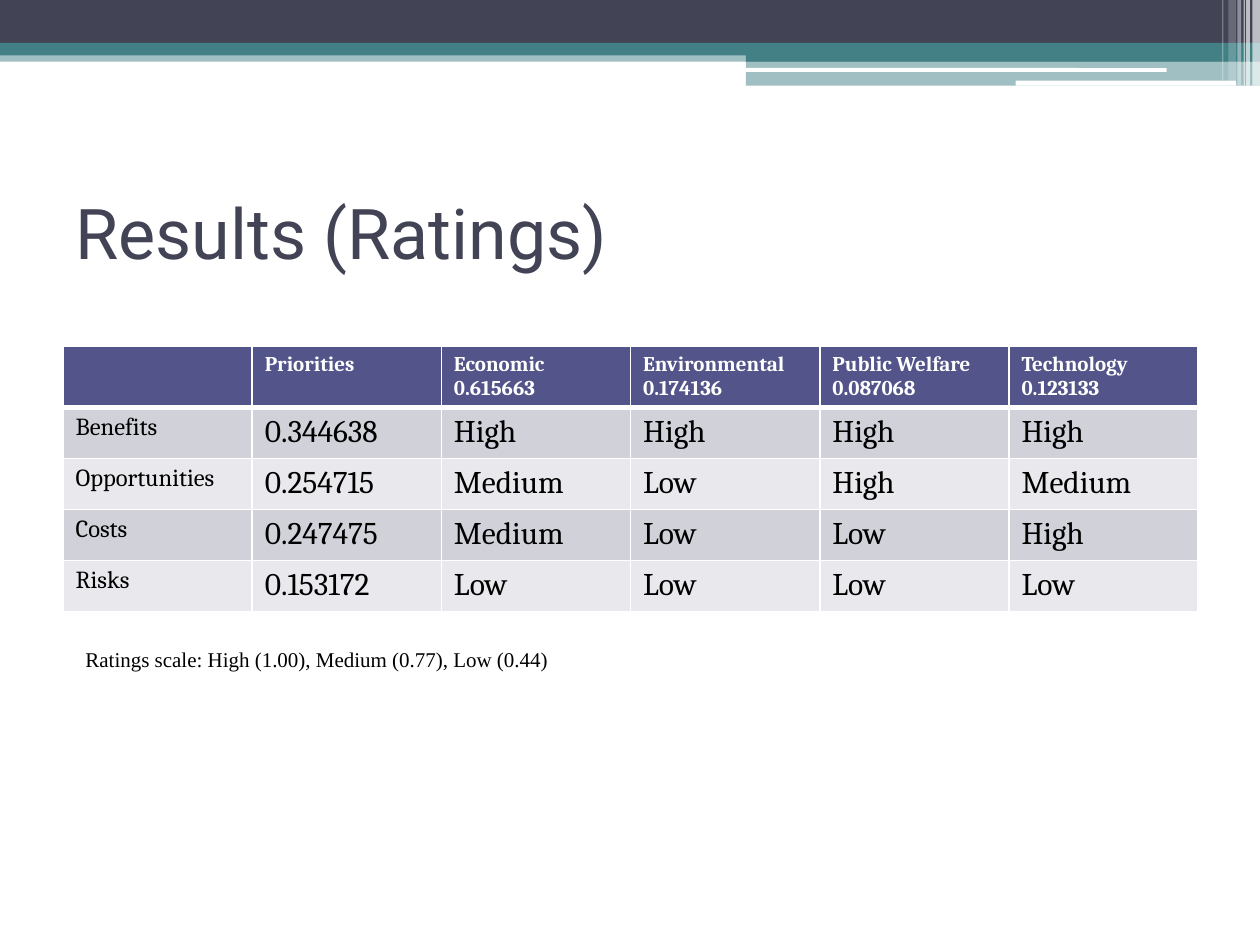
import dataclasses
import lxml.etree
import pptx
import pptx.dml.color
import pptx.enum.shapes
import pptx.enum.text
import pptx.oxml.ns
import pptx.util

KIND = pptx.enum.shapes.MSO_SHAPE
ALIGN = pptx.enum.text.PP_ALIGN
ANCHOR = pptx.enum.text.MSO_ANCHOR
qn = pptx.oxml.ns.qn


@dataclasses.dataclass(frozen=True)
class Theme:
    dark: str = "424456"
    teal: str = "438086"
    white: str = "FFFFFF"
    black: str = "000000"
    head: str = "53548A"
    bands: tuple = ("D1D1DA", "E9E9ED")
    title: int = 40
    cell: int = 18
    label: int = 14
    small: int = 12
    sans: str = "Roboto"
    serif: str = "Cambria"
    note: str = "Times New Roman"


class Deck:
    cols, rows = 100, 75

    def __init__(self, theme):
        self.theme = theme
        self.file = pptx.Presentation()
        self.file.slide_width = pptx.util.Inches(10)
        self.file.slide_height = pptx.util.Inches(7.5)
        self.slide = self.file.slides.add_slide(self.file.slide_layouts[5])

    def across(self, count):
        return round(self.file.slide_width * count / self.cols)

    def down(self, count):
        return round(self.file.slide_height * count / self.rows)

    def place(self, left, top, width, height):
        return self.across(left), self.down(top), self.across(width), self.down(height)

    def color(self, code):
        return pptx.dml.color.RGBColor.from_string(code)

    def letter(self, frame, text, size, font, code, bold=False):
        frame.text = text
        for para in frame.paragraphs:
            para.alignment = ALIGN.LEFT
            for run in para.runs:
                run.font.size = pptx.util.Pt(size)
                run.font.name = font
                run.font.bold = bold
                run.font.color.rgb = self.color(code)

    def bar(self, box, code, alpha=100, kind=KIND.RECTANGLE):
        shape = self.slide.shapes.add_shape(kind, *self.place(*box))
        shape.shadow.inherit = False
        shape.line.fill.background()
        shape.fill.solid()
        shape.fill.fore_color.rgb = self.color(code)
        if alpha < 100:
            tint = shape.element.spPr.find(f"{qn('a:solidFill')}/{qn('a:srgbClr')}")
            lxml.etree.SubElement(tint, qn("a:alpha"), val=str(alpha * 1000))

    def title(self, text, box):
        shape = self.slide.shapes.title
        shape.left, shape.top, shape.width, shape.height = self.place(*box)
        shape.text_frame.vertical_anchor = ANCHOR.MIDDLE
        self.letter(shape.text_frame, text, self.theme.title, self.theme.sans, self.theme.dark)

    def edge(self, cell, base):
        props = cell._tc.get_or_add_tcPr()
        for spot, (side, width) in enumerate(zip("LRTB", (1, 1, 1, base))):
            line = lxml.etree.Element(qn(f"a:ln{side}"), w=str(pptx.util.Pt(width)))
            fill = lxml.etree.SubElement(line, qn("a:solidFill"))
            lxml.etree.SubElement(fill, qn("a:srgbClr"), val=self.theme.white)
            props.insert(spot, line)

    def table(self, data, box, first):
        look = self.theme
        grid = self.slide.shapes.add_table(len(data), len(data[0]), *self.place(*box)).table
        for row, texts in enumerate(data):
            head = row == 0
            height = first if head else (box[3] - first) / (len(data) - 1)
            grid.rows[row].height = self.down(height)
            for col, text in enumerate(texts):
                cell = grid.cell(row, col)
                cell.fill.solid()
                cell.fill.fore_color.rgb = self.color(look.head if head else look.bands[(row - 1) % 2])
                self.edge(cell, 3 if head else 1)
                size = look.small if head else look.cell if col else look.label
                self.letter(cell.text_frame, text, size, look.serif,
                            look.white if head else look.black, head)

    def note(self, text, box):
        frame = self.slide.shapes.add_textbox(*self.place(*box)).text_frame
        frame.word_wrap = False
        frame.auto_size = pptx.enum.text.MSO_AUTO_SIZE.SHAPE_TO_FIT_TEXT
        frame.vertical_anchor = ANCHOR.MIDDLE
        self.letter(frame, text, self.theme.small, self.theme.note, self.theme.black)


def main():
    look = Theme()
    deck = Deck(look)

    bands = [
        ((0, 4, 100, 0.9), look.teal, 50),
        ((0, 0, 100, 3.4), look.dark, 100),
        ((0, 3.4, 100, 1), look.teal, 100),
        ((59.2, 3.9, 40.8, 1), look.teal, 100),
        ((59.2, 4.8, 40.8, 2), look.teal, 50),
    ]
    for box, code, alpha in bands:
        deck.bar(box, code, alpha)

    for box in ((59.1, 5.4, 33.5, 0.3), (80.6, 6.4, 17.5, 0.4)):
        deck.bar(box, look.white, kind=KIND.ROUNDED_RECTANGLE)

    stripes = [
        (99.4, 0.6, 6.8, 65),
        (98.9, 0.3, 6.8, 65),
        (98.7, 0.1, 6.8, 60),
        (98.2, 0.3, 6.8, 40),
        (97.5, 0.6, 6.4, 20),
        (97, 0.1, 6.4, 30),
    ]
    for left, width, height, alpha in stripes:
        deck.bar((left, 0, width, height), look.white, alpha)

    deck.title("Results (Ratings)", (5, 12.5, 90, 11.7))
    ratings = [
        ("", "Priorities", "Economic\n0.615663", "Environmental\n0.174136",
         "Public Welfare\n0.087068", "Technology\n0.123133"),
        ("Benefits", "0.344638", "High", "High", "High", "High"),
        ("Opportunities", "0.254715", "Medium", "Low", "High", "Medium"),
        ("Costs", "0.247475", "Medium", "Low", "Low", "High"),
        ("Risks", "0.153172", "Low", "Low", "Low", "Low"),
    ]
    deck.table(ratings, (5, 27.5, 90.1, 21), 4.8)
    deck.note("Ratings scale: High (1.00), Medium (0.77), Low (0.44)", (5.8, 50.8, 39.2, 3))
    deck.file.save("out.pptx")


if __name__ == "__main__":
    main()
